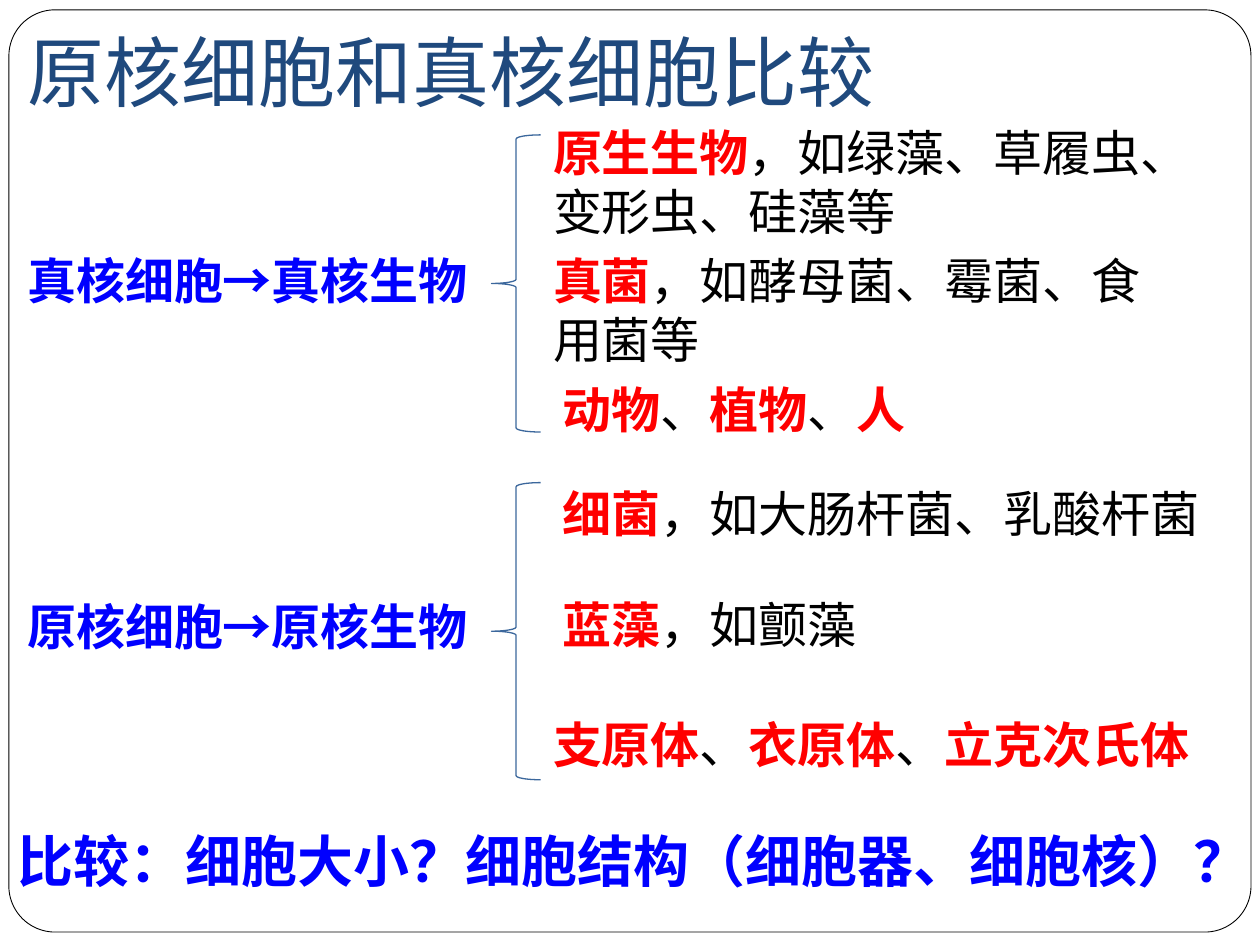
from pptx import Presentation
from pptx.dml.color import RGBColor
from pptx.enum.shapes import MSO_SHAPE
from pptx.enum.text import MSO_ANCHOR, MSO_AUTO_SIZE, PP_ALIGN
from pptx.util import Cm, Pt

WHITE = RGBColor(0xFF, 0xFF, 0xFF)
BLACK = RGBColor(0, 0, 0)
NAVY = RGBColor(0x1F, 0x49, 0x7D)
STEEL = RGBColor(0x3B, 0x67, 0x9C)
BLUE = RGBColor(0, 0, 0xFF)
RED = RGBColor(0xFF, 0, 0)

LABELS = [
    ("真核细胞→真核生物", 4.93, 12.6),
    ("原核细胞→原核生物", 11.91, 13.21),
]
BRACES = [2.72, 9.73]
ITEMS = [
    ("*原生生物*，如绿藻、草履虫、变形虫、硅藻等", 10.9, 2.34, 13.21, 2.64),
    ("*真菌*，如酵母菌、霉菌、食用菌等", 10.9, 4.93, 12.6, 2.64),
    ("*动物*、*植物*、*人*", 11.1, 7.52, 12.6, 1.45),
    ("*细菌*，如大肠杆菌、乳酸杆菌", 11.1, 9.63, 18.01, 1.45),
    ("*蓝藻*，如颤藻", 11.1, 11.86, 12.6, 1.45),
    ("*支原体*、*衣原体*、*立克次氏体*", 10.9, 14.27, 20.19, 1.45),
]


def style(run, size, color, bold, name="Arial"):
    """Set the font of a run."""
    font = run.font
    font.name, font.size, font.bold = name, Pt(size), bold
    font.color.rgb = color


def add_box(slide, x, y, w, h):
    """Add a wrapping text box and return its first paragraph."""
    box = slide.shapes.add_textbox(Cm(x), Cm(y), Cm(w), Cm(h))
    frame = box.text_frame
    frame.word_wrap = True
    frame.auto_size = MSO_AUTO_SIZE.SHAPE_TO_FIT_TEXT
    return frame.paragraphs[0]


def add_label(slide, text, x, y, w, h, size=28):
    """Add a bold blue line of text."""
    para = add_box(slide, x, y, w, h)
    para.text = text
    style(para.runs[0], size, BLUE, True)


def add_item(slide, text, x, y, w, h):
    """Add black text whose starred parts are bold and red."""
    para = add_box(slide, x, y, w, h)
    for i, part in enumerate(text.split("*")):
        if part:
            run = para.add_run()
            run.text = part
            key = i % 2 == 1
            style(run, 28, RED if key else BLACK, key)


def add_shape(slide, kind, x, y, w, h, color, width):
    """Add an outlined shape without fill or shadow."""
    shape = slide.shapes.add_shape(kind, Cm(x), Cm(y), Cm(w), Cm(h))
    shape.shadow.inherit = False
    shape.fill.background()
    shape.line.color.rgb = color
    shape.line.width = Pt(width)
    return shape


def add_frame(slide):
    """Add the rounded border behind the title."""
    frame = add_shape(slide, MSO_SHAPE.ROUNDED_RECTANGLE,
                      0.18, 0.2, 25.04, 18.59, BLACK, 0.5)
    frame.adjustments[0] = 0.05
    frame.fill.solid()
    frame.fill.fore_color.rgb = WHITE
    slide.shapes.title.element.addprevious(frame.element)


def set_title(slide, text):
    """Place and format the title."""
    title = slide.shapes.title
    title.left, title.top = Cm(0.3), Cm(0.36)
    title.width, title.height = Cm(18.59), Cm(2.13)
    frame = title.text_frame
    frame.text = text
    frame.word_wrap = True
    frame.auto_size = MSO_AUTO_SIZE.SHAPE_TO_FIT_TEXT
    frame.vertical_anchor = MSO_ANCHOR.TOP
    para = frame.paragraphs[0]
    para.alignment = PP_ALIGN.LEFT
    style(para.runs[0], 44, NAVY, False, "Karla")


def main():
    """Build and save the slide."""
    deck = Presentation()
    deck.slide_width, deck.slide_height = Cm(25.4), Cm(19.05)
    slide = deck.slides.add_slide(deck.slide_layouts[5])
    set_title(slide, "原核细胞和真核细胞比较")
    add_frame(slide)
    for text, y, w in LABELS:
        add_label(slide, text, 0.3, y, w, 1.45)
    for y in BRACES:
        add_shape(slide, MSO_SHAPE.LEFT_BRACE, 9.91, y, 0.99, 5.99, STEEL, 0.75)
    for item in ITEMS:
        add_item(slide, *item)
    add_label(slide, "比较：细胞大小？细胞结构（细胞器、细胞核）？",
              0.1, 16.54, 25.6, 1.63, 32)
    deck.save("out.pptx")


if __name__ == "__main__":
    main()
